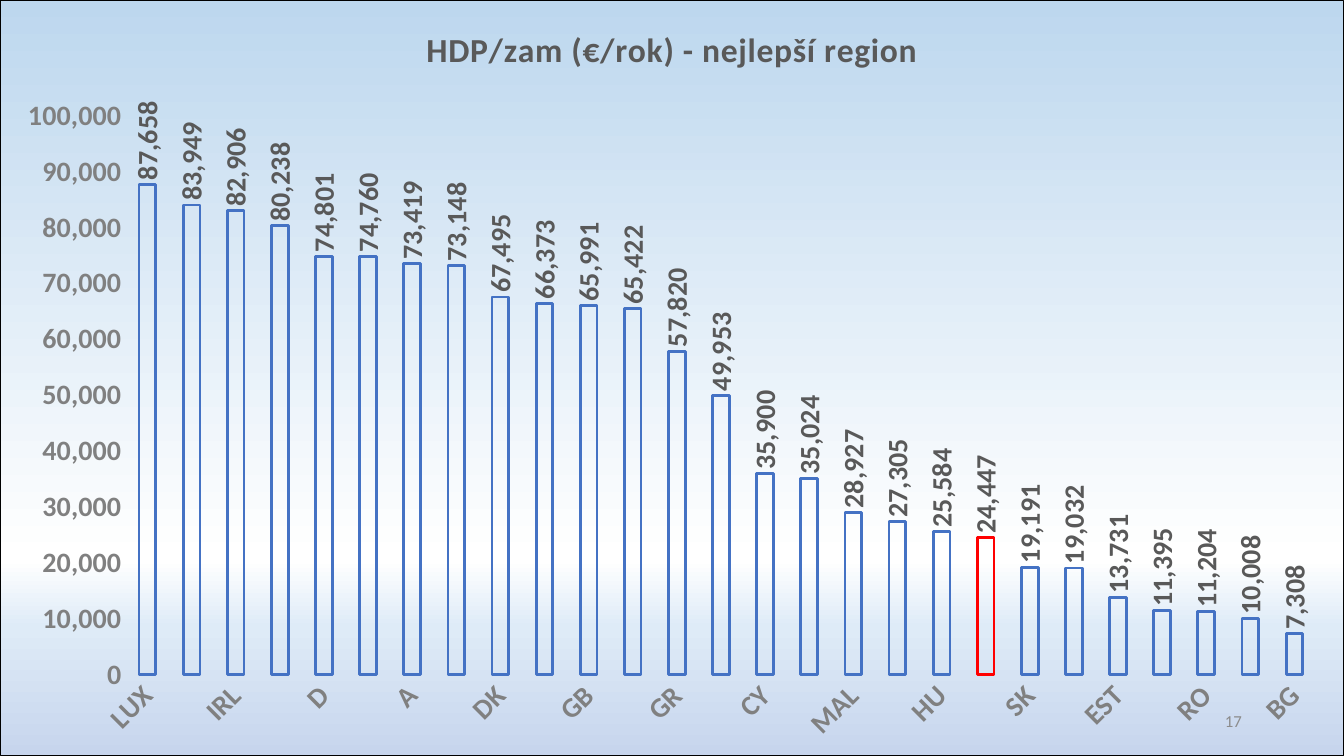
"""Build a slide with a column chart of the best region in each country."""
from typing import NamedTuple

from lxml import etree
from pptx import Presentation
from pptx.chart.data import CategoryChartData
from pptx.dml.color import RGBColor
from pptx.enum.chart import XL_CHART_TYPE, XL_LABEL_POSITION, XL_TICK_MARK
from pptx.enum.text import MSO_ANCHOR, PP_ALIGN
from pptx.oxml import parse_xml
from pptx.oxml.ns import nsdecls, qn
from pptx.util import Cm, Pt

COLUMN = XL_CHART_TYPE.COLUMN_CLUSTERED
OUTSIDE = XL_LABEL_POSITION.OUTSIDE_END
NONE = XL_TICK_MARK.NONE
MIDDLE = MSO_ANCHOR.MIDDLE
RIGHT = PP_ALIGN.RIGHT

BLUE = RGBColor(0x44, 0x72, 0xC4)
RED = RGBColor(0xFF, 0x00, 0x00)
DARK = RGBColor(0x59, 0x59, 0x59)
GRAY = RGBColor(0x80, 0x80, 0x80)
PALE = RGBColor(0x8C, 0x8C, 0x8C)
BLACK = RGBColor(0x00, 0x00, 0x00)

FONT = "Calibri"
FORMAT = "#,##0"
WIDTH, HEIGHT = Cm(33.87), Cm(19.05)
TITLE = "HDP/zam (€/rok) - nejlepší region"
HOME = "CZ"


class Stop(NamedTuple):
    """One colour stop of the background, in percent."""
    place: int
    color: RGBColor


class Bar(NamedTuple):
    """One country with its value."""
    land: str
    value: int


STOPS = [
    Stop(0, RGBColor(0xBD, 0xD7, 0xEE)),
    Stop(74, RGBColor(0xFF, 0xFF, 0xFF)),
    Stop(83, RGBColor(0xDE, 0xEB, 0xF7)),
    Stop(100, RGBColor(0xC7, 0xD5, 0xED)),
]

BARS = [
    Bar("LUX", 87658), Bar("F", 83949), Bar("IRL", 82906),
    Bar("B", 80238), Bar("D", 74801), Bar("NL", 74760),
    Bar("A", 73419), Bar("SWE", 73148), Bar("DK", 67495),
    Bar("IRL", 66373), Bar("GB", 65991), Bar("FIN", 65422),
    Bar("GR", 57820), Bar("E", 49953), Bar("CY", 35900),
    Bar("P", 35024), Bar("MAL", 28927), Bar("SLO", 27305),
    Bar("HU", 25584), Bar("CZ", 24447), Bar("SK", 19191),
    Bar("PL", 19032), Bar("EST", 13731), Bar("LT", 11395),
    Bar("RO", 11204), Bar("LT", 10008), Bar("BG", 7308),
]


def style(font, size: float, color: RGBColor, bold: bool = True) -> None:
    """Set face, size, colour and weight."""
    font.name = FONT
    font.size = Pt(size)
    font.bold = bold
    font.color.rgb = color


def turn(part, angle: int) -> None:
    """Rotate the text of a chart part by degrees."""
    body = next(part.iter(qn("a:bodyPr")))
    body.set("rot", str(angle * 60000))
    body.set("vert", "horz")


def paint(slide) -> None:
    """Fill the background with the gradient."""
    fill = slide.background.fill
    fill.gradient()
    fill.gradient_angle = 270
    stops = next(slide.element.iter(qn("a:gsLst")))
    for old in list(stops):
        stops.remove(old)
    for stop in STOPS:
        node = etree.SubElement(stops, qn("a:gs"), pos=str(stop.place * 1000))
        etree.SubElement(node, qn("a:srgbClr"), val=str(stop.color))


def number(slide) -> None:
    """Add the slide number."""
    box = slide.shapes.add_textbox(Cm(23.93), Cm(17.65), Cm(7.62), Cm(1.02))
    frame = box.text_frame
    frame.word_wrap = True
    frame.vertical_anchor = MIDDLE
    frame.text = "17"
    line = frame.paragraphs[0]
    line.alignment = RIGHT
    style(line.runs[0].font, 12, PALE, False)


def frame(chart) -> None:
    """Clear the chart area, outline it and place the plot."""
    space = chart.element
    area = parse_xml(
        f'<c:spPr {nsdecls("c", "a")}><a:noFill/><a:ln w="{Pt(0.75)}"><a:solidFill>'
        f'<a:srgbClr val="{BLACK}"/></a:solidFill></a:ln></c:spPr>')
    space.find(qn("c:chart")).addnext(area)
    plot = next(space.iter(qn("c:plotArea")))
    for old in plot.findall(qn("c:layout")):
        plot.remove(old)
    plot.insert(0, parse_xml(
        f'<c:layout {nsdecls("c")}><c:manualLayout><c:layoutTarget val="inner"/>'
        '<c:xMode val="edge"/><c:yMode val="edge"/><c:x val="0.093"/><c:y val="0.152"/>'
        '<c:w val="0.887"/><c:h val="0.741"/></c:manualLayout></c:layout>'))
    plot.append(parse_xml(f'<c:spPr {nsdecls("c", "a")}><a:noFill/></c:spPr>'))


def head(chart) -> None:
    """Write the chart title."""
    chart.has_title = True
    chart.chart_title.include_in_layout = False
    text = chart.chart_title.text_frame
    text.text = TITLE
    run = text.paragraphs[0].runs[0]
    style(run.font, 24, DARK)
    run.font._element.set("spc", "50")


def axes(chart) -> None:
    """Format both axes."""
    for axis in (chart.category_axis, chart.value_axis):
        axis.has_major_gridlines = False
        axis.major_tick_mark = axis.minor_tick_mark = NONE
        axis.format.line.fill.background()
        style(axis.tick_labels.font, 20, GRAY)
    turn(chart.category_axis._element, -45)
    scale = chart.value_axis
    scale.minimum_scale, scale.maximum_scale = 0, 100000
    scale.major_unit = 10000
    scale.tick_labels.number_format = FORMAT
    scale.tick_labels.number_format_is_linked = False


def outline(item, color: RGBColor) -> None:
    """Draw a bar as an empty outline."""
    item.format.fill.background()
    item.format.line.color.rgb = color
    item.format.line.width = Pt(2)


def bars(chart) -> None:
    """Format the bars and their labels."""
    plot = chart.plots[0]
    plot.gap_width, plot.overlap = 164, -35
    plot.vary_by_categories = False
    series = plot.series[0]
    series.invert_if_negative = False
    outline(series, BLUE)
    home = [bar.land for bar in BARS].index(HOME)
    outline(series.points[home], RED)
    labels = series.data_labels
    labels.show_value = True
    labels.position = OUTSIDE
    labels.number_format = FORMAT
    labels.number_format_is_linked = False
    style(labels.font, 20, DARK)
    turn(labels._element, -90)


def graph(slide) -> None:
    """Add the column chart."""
    data = CategoryChartData(number_format=FORMAT)
    data.categories = [bar.land for bar in BARS]
    data.add_series("Series 1", [bar.value for bar in BARS])
    chart = slide.shapes.add_chart(COLUMN, 0, 0, WIDTH, HEIGHT, data).chart
    chart.has_legend = False
    style(chart.font, 20, BLACK)
    frame(chart)
    head(chart)
    axes(chart)
    bars(chart)


def main() -> None:
    """Build and save the slide."""
    deck = Presentation()
    deck.slide_width, deck.slide_height = WIDTH, HEIGHT
    slide = deck.slides.add_slide(deck.slide_layouts[6])
    paint(slide)
    number(slide)
    graph(slide)
    deck.save("out.pptx")


if __name__ == "__main__":
    main()
